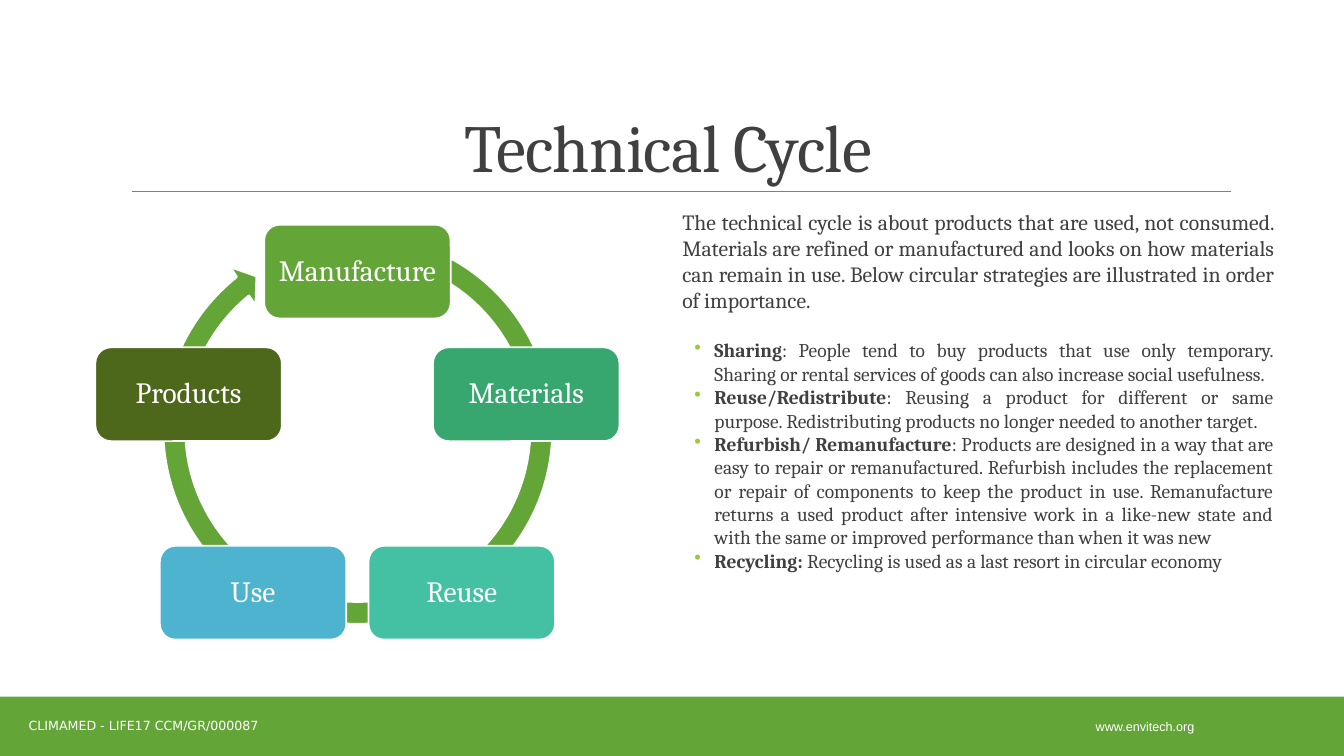
import math
from dataclasses import dataclass

from lxml import etree
from pptx import Presentation
from pptx.dml.color import RGBColor
from pptx.enum import shapes, text
from pptx.oxml.ns import qn
from pptx.util import Pt

GREEN, WHITE, DARK, LIME = "63A537", "FFFFFF", "404040", "99CB38"
SERIF = "Cambria"


@dataclass
class Stage:
    name: str
    color: str


@dataclass
class Point:
    head: str
    body: str


@dataclass
class Note:
    words: str
    font: str
    left: float
    top: float
    width: float


STAGES = [
    Stage("Manufacture", GREEN),
    Stage("Materials", "37A76F"),
    Stage("Reuse", "44C1A3"),
    Stage("Use", "4EB3CF"),
    Stage("Products", "4D671B"),
]
INTRO = (
    "The technical cycle is about products that are used, not consumed. "
    "Materials are refined or manufactured and looks on how materials can "
    "remain in use. Below circular strategies are illustrated in order of importance. "
)
POINTS = [
    Point("Sharing", ": People tend to buy products that use only temporary. Sharing or "
          "rental services of goods can also increase social usefulness. "),
    Point("Reuse/Redistribute", ": Reusing a product for different or same purpose. "
          "Redistributing products no longer needed to another target."),
    Point("Refurbish/ Remanufacture", ": Products are designed in a way that are easy to "
          "repair or remanufactured. Refurbish includes the replacement or repair of "
          "components to keep the product in use. Remanufacture returns a used product "
          "after intensive work in a like-new state and with the same or improved "
          "performance than when it was new"),
    Point("Recycling: ", "Recycling is used as a last resort in circular economy"),
]
NOTES = [
    Note("www.envitech.org", "Arial", 729.4, 504.7, 177),
    Note("CLIMAMED - LIFE17 CCM/GR/000087", "DejaVu Sans", -11.5, 504, 228),
]
MID_X, MID_Y, RADIUS = 255.3, 320.8, 126.8
BOX_W, BOX_H = 133.2, 67
RING = 296.6
RING_ADJ = (5500, 330700, 13868400, 17330000, 5800)


def tint(code: str) -> RGBColor:
    return RGBColor.from_string(code)


def style(para, font: str, size: float, code: str, align) -> None:
    para.alignment = align
    for run in para.runs:
        run.font.name = font
        run.font.size = Pt(size)
        run.font.color.rgb = tint(code)


def draw(slide, kind, left: float, top: float, width: float, height: float,
         fill: str, edge: float = 0):
    shape = slide.shapes.add_shape(kind, Pt(left), Pt(top), Pt(width), Pt(height))
    shape.shadow.inherit = False
    shape.fill.solid()
    shape.fill.fore_color.rgb = tint(fill)
    if edge:
        shape.line.color.rgb = tint(WHITE)
        shape.line.width = Pt(edge)
    else:
        shape.line.fill.background()
    return shape


def indent(para, left: float, first: float) -> None:
    props = para._p.get_or_add_pPr()
    props.set("marL", str(Pt(left)))
    props.set("indent", str(Pt(first)))


def bullet(para) -> None:
    indent(para, 30.2, -14.4)
    props = para._p.get_or_add_pPr()
    color = etree.SubElement(props, qn("a:buClr"))
    etree.SubElement(color, qn("a:srgbClr")).set("val", LIME)
    etree.SubElement(props, qn("a:buChar")).set("char", "•")


def add_title(slide) -> None:
    title = slide.shapes.title
    title.left, title.top, title.width, title.height = Pt(86.4), Pt(22.3), Pt(792), Pt(114.5)
    frame = title.text_frame
    frame.text = "Technical Cycle "
    frame.auto_size = text.MSO_AUTO_SIZE.NONE
    frame.vertical_anchor = text.MSO_ANCHOR.BOTTOM
    para = frame.paragraphs[0]
    para.line_spacing = 0.85
    style(para, SERIF, 48, DARK, text.PP_ALIGN.CENTER)
    para.runs[0].font._element.set("spc", "-50")


def add_rule(slide) -> None:
    rule = slide.shapes.add_connector(
        shapes.MSO_CONNECTOR.STRAIGHT, Pt(94.3), Pt(136.8), Pt(879.1), Pt(136.8))
    rule.line.color.rgb = tint("808080")
    rule.line.width = Pt(0.5)
    etree.SubElement(rule._element.spPr, qn("a:effectLst"))


def add_note(slide, note: Note) -> None:
    box = slide.shapes.add_textbox(Pt(note.left), Pt(note.top), Pt(note.width), Pt(28.8))
    frame = box.text_frame
    frame.word_wrap = True
    frame.vertical_anchor = text.MSO_ANCHOR.MIDDLE
    frame.text = note.words
    style(frame.paragraphs[0], note.font, 9, WHITE, text.PP_ALIGN.CENTER)


def add_body(slide) -> None:
    box = slide.shapes.add_textbox(Pt(480.2), Pt(145.4), Pt(429.8), Pt(354.2))
    frame = box.text_frame
    frame.word_wrap = True
    frame.margin_left = frame.margin_right = 0
    frame.text = INTRO
    indent(frame.paragraphs[0], 7.2, 0)
    style(frame.paragraphs[0], SERIF, 15.5, DARK, text.PP_ALIGN.JUSTIFY)
    for rank, point in enumerate(POINTS):
        para = frame.add_paragraph()
        if rank == 0:
            para.space_before = Pt(18.5)
        bullet(para)
        for words, bold in ((point.head, True), (point.body, False)):
            run = para.add_run()
            run.text = words
            run.font.bold = bold
        style(para, SERIF, 13.9, DARK, text.PP_ALIGN.JUSTIFY)


def add_stage(slide, stage: Stage, angle: float) -> None:
    left = MID_X + RADIUS * math.sin(angle) - BOX_W / 2
    top = MID_Y - RADIUS * math.cos(angle) - BOX_H / 2
    box = draw(slide, shapes.MSO_SHAPE.ROUNDED_RECTANGLE, left, top,
               BOX_W, BOX_H, stage.color, 1.25)
    frame = box.text_frame
    frame.margin_left = frame.margin_right = Pt(6.5)
    frame.word_wrap = True
    frame.vertical_anchor = text.MSO_ANCHOR.MIDDLE
    frame.text = stage.name
    frame.paragraphs[0].line_spacing = 0.9
    style(frame.paragraphs[0], SERIF, 21, WHITE, text.PP_ALIGN.CENTER)


def add_cycle(slide) -> None:
    ring = draw(slide, shapes.MSO_SHAPE.CIRCULAR_ARROW, 107.3, 158.4, RING, RING, GREEN, 2)
    for spot, value in enumerate(RING_ADJ):
        ring.adjustments[spot] = value / 100000
    for rank, stage in enumerate(STAGES):
        add_stage(slide, stage, math.tau * rank / len(STAGES))


def main() -> None:
    deck = Presentation()
    deck.slide_width, deck.slide_height = Pt(960), Pt(540)
    slide = deck.slides.add_slide(deck.slide_layouts[5])
    draw(slide, shapes.MSO_SHAPE.RECTANGLE, 0, 497.5, 960, 42.5, GREEN)
    add_rule(slide)
    for note in NOTES:
        add_note(slide, note)
    add_title(slide)
    add_body(slide)
    add_cycle(slide)
    deck.save("out.pptx")


if __name__ == "__main__":
    main()
